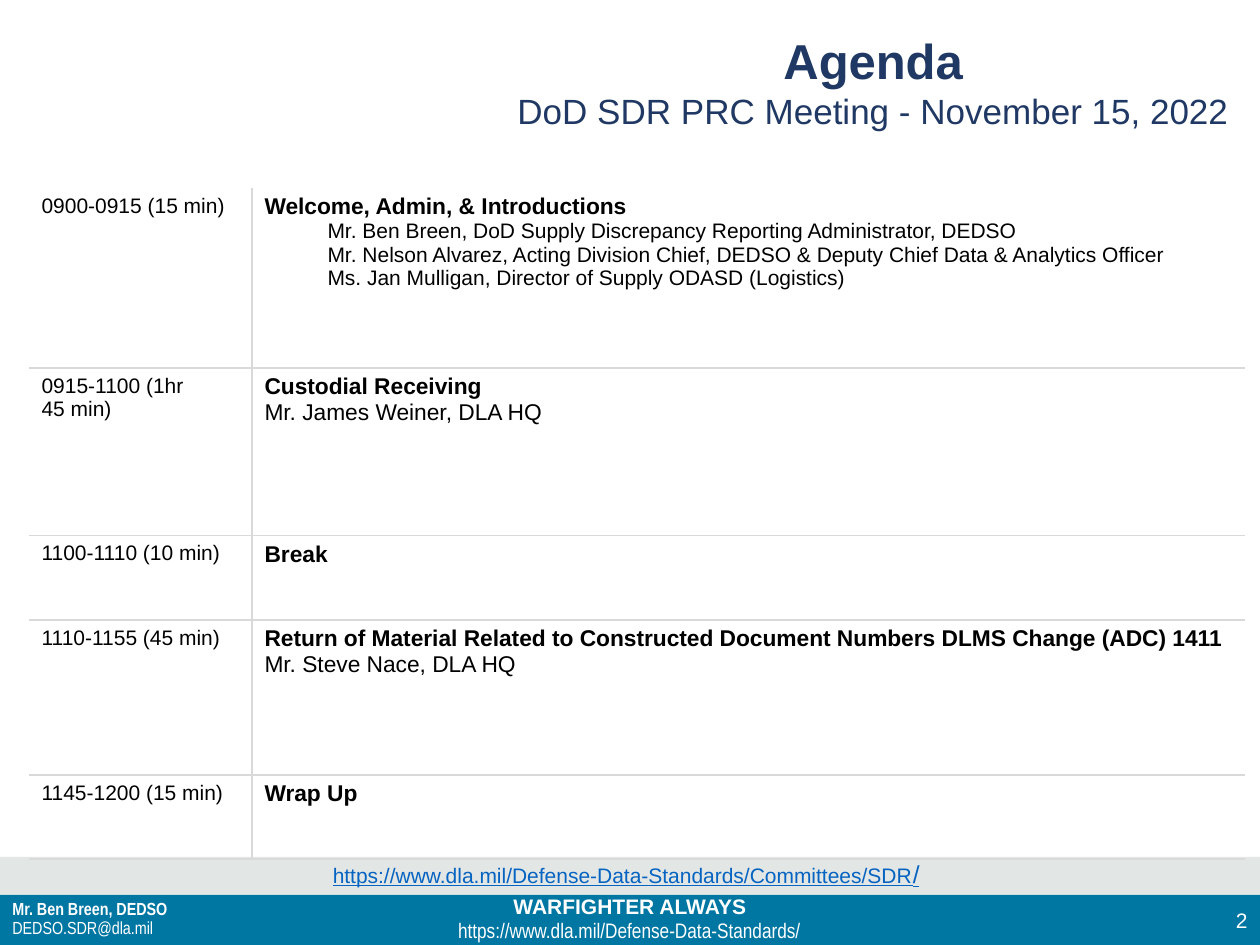
from lxml import etree
from pptx import Presentation
from pptx import util as u
from pptx.dml.color import RGBColor
from pptx.enum import shapes, text
from pptx.oxml import ns

NAVY = RGBColor(0x20, 0x38, 0x64)
BLUE = RGBColor(0x00, 0x76, 0xA3)
PALE = RGBColor(0xE2, 0xE6, 0xE5)
RULE = RGBColor(0xD9, 0xD9, 0xD9)
LINK = RGBColor(0x05, 0x63, 0xC1)
WHITE = RGBColor(0xFF, 0xFF, 0xFF)
BLACK = RGBColor(0x00, 0x00, 0x00)
LEFT, CENTER, RIGHT = text.PP_ALIGN.LEFT, text.PP_ALIGN.CENTER, text.PP_ALIGN.RIGHT
TOP, MIDDLE = text.MSO_ANCHOR.TOP, text.MSO_ANCHOR.MIDDLE

prs = Presentation()
prs.slide_width, prs.slide_height = u.Inches(10), u.Inches(7.5)
W, H = 10, 7.5
BAR = 0.4               # blue footer bar
BAND = 0.3              # grey band above it
BAR_TOP = H - BAR
s = prs.slides.add_slide(prs.slide_layouts[6])


def add_run(p, words, size, color, bold=False, font="Arial", underline=None):
    r = p.add_run()
    r.text = words
    r.font.size, r.font.name, r.font.bold = u.Pt(size), font, bold
    r.font.color.rgb, r.font.underline = color, underline


def add_text(left, top, width, height, paragraphs, align=LEFT, anchor=TOP, spacing=None):
    box = s.shapes.add_textbox(*map(u.Inches, (left, top, width, height)))
    tf = box.text_frame
    tf.word_wrap, tf.vertical_anchor = True, anchor
    for i, runs in enumerate(paragraphs):
        p = tf.add_paragraph() if i else tf.paragraphs[0]
        p.alignment, p.line_spacing = align, spacing
        for run in runs:
            add_run(p, *run)


# Footer bands
for top, height, color in ((BAR_TOP, BAR, BLUE), (BAR_TOP - BAND, BAND, PALE)):
    sp = s.shapes.add_shape(shapes.MSO_SHAPE.RECTANGLE, 0, u.Inches(top),
                            prs.slide_width, u.Inches(height))
    sp.shadow.inherit = False
    sp.fill.solid()
    sp.fill.fore_color.rgb = color
    sp.line.fill.background()
add_text(0, 7.04, W, BAND, [[("WARFIGHTER ALWAYS", 12, WHITE, True)]], CENTER)

# Title
add_text(3.86, 0.19, W - 3.86, 1.15,
         [[("Agenda", 28, NAVY, True)],
          [("DoD SDR PRC Meeting - November 15, 2022", 20, NAVY)]], CENTER)

# Agenda: row height, time, then lines of (words, size, bold, indent)
agenda = [
    (1.43, "0900-0915 (15 min)", [
        ("Welcome, Admin, & Introductions", 13, True, 0),
        ("Mr. Ben Breen, DoD Supply Discrepancy Reporting Administrator, DEDSO",
         12, False, 0.5),
        ("Mr. Nelson Alvarez, Acting Division Chief, DEDSO & Deputy Chief Data"
         " & Analytics Officer", 12, False, 0.5),
        ("Ms. Jan Mulligan, Director of Supply ODASD (Logistics)", 12, False, 0.5)]),
    (1.33, "0915-1100 (1hr 45\u00a0min)", [
        ("Custodial Receiving", 13, True, 0),
        ("Mr. James Weiner, DLA HQ", 13, False, 0)]),
    (0.67, "1100-1110 (10 min)", [("Break", 13, True, 0)]),
    (1.23, "1110-1155 (45 min)", [
        ("Return of Material Related to Constructed Document Numbers DLMS Change"
         " (ADC) 1411", 13, True, 0),
        ("Mr. Steve Nace, DLA HQ", 13, False, 0)]),
    (0.67, "1145-1200 (15 min)", [("Wrap Up", 13, True, 0)]),
]
COLS = (1.77, 7.88)
table = s.shapes.add_table(len(agenda), len(COLS), u.Inches(0.23), u.Inches(1.49),
                           u.Inches(sum(COLS)),
                           u.Inches(sum(row[0] for row in agenda))).table
table.first_row = table.horz_banding = False
for col, width in zip(table.columns, COLS):
    col.width = u.Inches(width)

for i, (height, time, lines) in enumerate(agenda):
    table.rows[i].height = u.Inches(height)
    for j, content in enumerate(([(time, 12, False, 0)], lines)):
        cell = table.cell(i, j)
        cell.margin_left = cell.margin_right = cell.margin_bottom = u.Inches(0.1)
        cell.margin_top = u.Inches(0.05)
        # Rules between columns and below rows only; borders precede the fill
        tcPr = cell._tc.get_or_add_tcPr()
        for edge, ruled in (("L", j > 0), ("R", j == 0), ("T", i > 0), ("B", True)):
            ln = etree.SubElement(tcPr, ns.qn("a:ln" + edge), w=str(u.Pt(1)))
            fill = etree.SubElement(ln, ns.qn("a:solidFill" if ruled else "a:noFill"))
            if ruled:
                etree.SubElement(fill, ns.qn("a:srgbClr"), val=str(RULE))
        cell.fill.background()
        tf = cell.text_frame
        for k, (words, size, bold, indent) in enumerate(content):
            p = tf.add_paragraph() if k else tf.paragraphs[0]
            if indent:
                p._p.get_or_add_pPr().set("marL", str(u.Inches(indent)))
            add_run(p, words, size, BLACK, bold)

# Footer texts
add_text(W - 0.5, BAR_TOP, 0.5, BAR, [[("2", 12, WHITE)]], RIGHT, MIDDLE)
add_text(0, BAR_TOP, COLS[0], BAR,
         [[("Mr. Ben Breen, DEDSO", 10, WHITE, True, "Arial Narrow")],
          [("DEDSO.SDR@dla.mil", 10, WHITE, False, "Arial Narrow")]],
         anchor=MIDDLE, spacing=0.9)
add_text(3.37, 7.23, 3.25, BAND,
         [[("https://www.dla.mil/Defense-Data-Standards/", 12, WHITE, False,
            "Arial Narrow")]], CENTER)
add_text(1, 6.77, 7.94, 0.34,
         [[("https://www.dla.mil/Defense-Data-Standards/Committees/SDR", 12, LINK,
            False, "Arial", True),
           ("/", 14, LINK, False, "Arial", True)]], CENTER)

prs.save("out.pptx")
